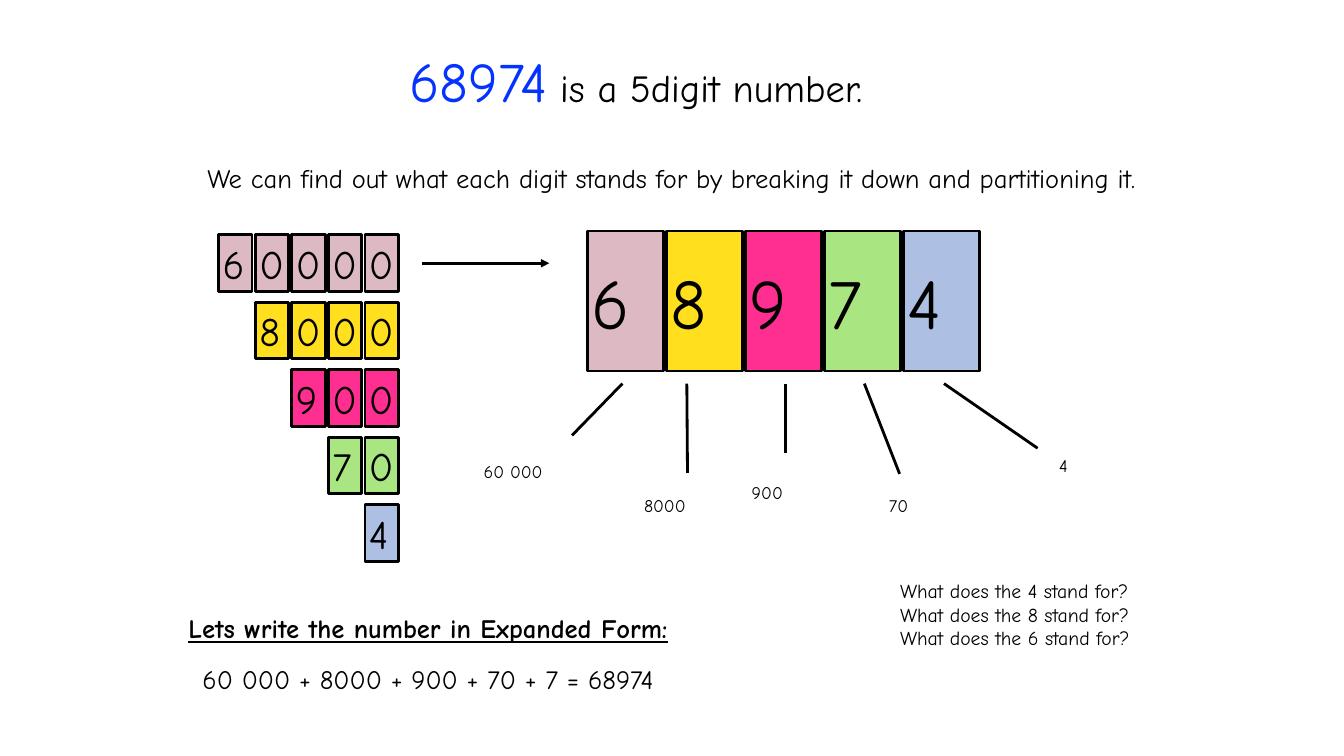
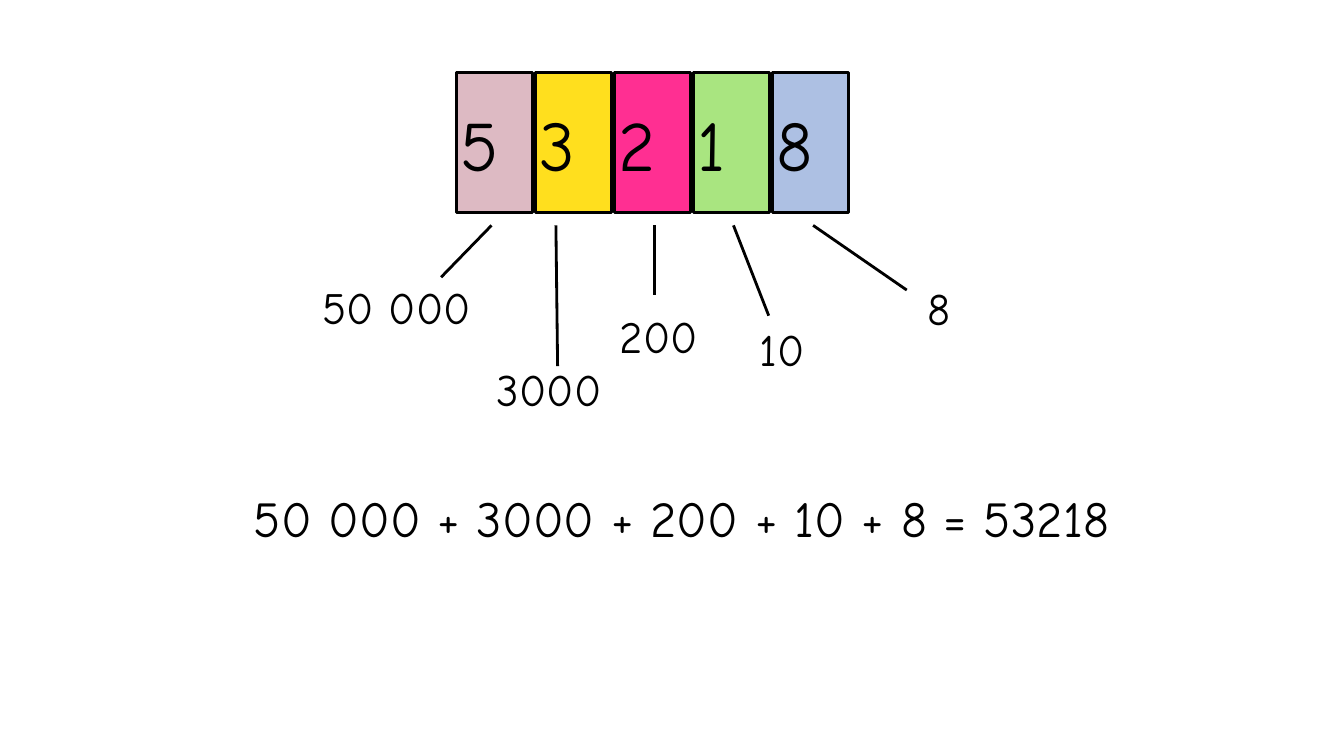
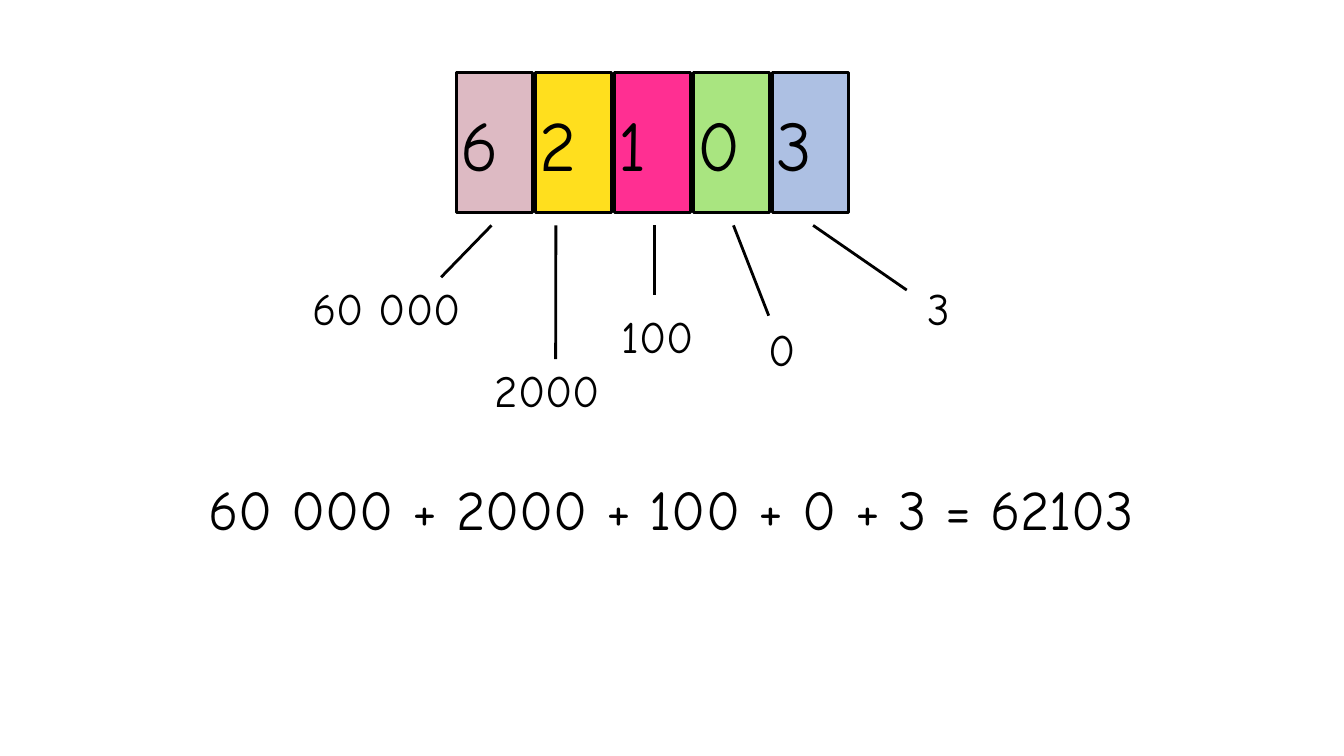
from pptx import Presentation
from pptx.dml.color import RGBColor as Rgb
from pptx.enum.shapes import MSO_CONNECTOR as Connector, MSO_SHAPE as Preset
from pptx.enum.text import MSO_ANCHOR as Anchor, MSO_AUTO_SIZE as AutoSize, PP_ALIGN as Align
from pptx.oxml.ns import qn
from pptx.util import Pt
from lxml.etree import SubElement

FONT = "Comic Neue"
COLOURS = {
    "ink": "000000",
    "blue": "0433FF",
    "ten thousands": "DDBAC3",
    "thousands": "FFDF1E",
    "hundreds": "FF2F92",
    "tens": "A9E580",
    "ones": "ADC0E3",
}
PLACES = ["ten thousands", "thousands", "hundreds", "tens", "ones"]
LINE_WIDTH = 2
INSET = 2.8
CARD_WIDTH, CARD_HEIGHT, CARD_STEP = 54, 100, 56.4
TILE_WIDTH, TILE_HEIGHT, TILE_STEP, ROW_STEP = 23.8, 40.3, 26.1, 48.2
TILE_LEFT, TILE_TOP = 156.3, 167.8


def add_box(page, left, top, width, height, fill=None, wrap=True, grow=True):
    frame = [Pt(value) for value in (left, top, width, height)]
    if fill:
        box = page.shapes.add_shape(Preset.RECTANGLE, *frame)
        box.shadow.inherit = False
        box.fill.solid()
        box.fill.fore_color.rgb = Rgb.from_string(COLOURS[fill])
        box.line.color.rgb = Rgb.from_string(COLOURS["ink"])
        box.line.width = Pt(LINE_WIDTH)
    else:
        box = page.shapes.add_textbox(*frame)
    text_frame = box.text_frame
    text_frame.word_wrap = wrap
    text_frame.auto_size = AutoSize.SHAPE_TO_FIT_TEXT if grow else AutoSize.NONE
    text_frame.vertical_anchor = Anchor.MIDDLE
    text_frame.margin_left = text_frame.margin_right = Pt(INSET)
    text_frame.margin_top = text_frame.margin_bottom = Pt(INSET)
    return box


def write(box, text, size, colour="ink", bold=None, underline=None, new_para=False):
    text_frame = box.text_frame
    para = text_frame.add_paragraph() if new_para else text_frame.paragraphs[-1]
    para.alignment = Align.LEFT
    span = para.add_run()
    span.text = text
    span.font.name = FONT
    span.font.size = Pt(size)
    span.font.bold = bold
    span.font.underline = underline
    span.font.color.rgb = Rgb.from_string(COLOURS[colour])


numbers = [
    {
        "digits": "68974", "left": 419.8, "top": 165,
        "second_end": (71.3, 172.8), "arrows": [(301.7, 188, 392.4, 188)],
        "label_size": 12.7, "label_height": 20.9,
        "labels": [
            ("60 000", 342.7, 326.2, 48.2), ("8000", 457.2, 350.6, 36.7),
            ("900", 534.2, 341.3, 28.8), ("70", 632.2, 350.6, 21.6),
            ("4", 753.8, 321.8, 13.7),
        ],
        "sum": ("60 000 + 8000 + 900 + 70 + 7 = 68974", 141.8, 470.2, 356.4, 28.8, 19),
    },
    {
        "digits": "53218", "left": 326.3, "top": 52,
        "second_end": (72, 209.5), "arrows": [],
        "label_size": 32, "label_height": 44.6,
        "labels": [
            ("50 000", 227.5, 196.6, 113.8), ("3000", 352.1, 255.6, 84.2),
            ("200", 439.9, 217.4, 64.8), ("10", 540, 226.8, 39.6),
            ("8", 659.5, 197.3, 25.2),
        ],
        "sum": ("50 000 + 3000 + 200 + 10 + 8 = 53218", 178.6, 344.9, 656.6, 49, 36),
    },
    {
        "digits": "62103", "left": 326.3, "top": 52,
        "second_end": (70.6, 204.5), "arrows": [],
        "label_size": 32, "label_height": 44.6,
        "labels": [
            ("60 000", 220.3, 197.3, 113.8), ("2000", 350.6, 256.3, 84.2),
            ("100", 441.4, 217.4, 59.8), ("0", 545.8, 226.8, 25.2),
            ("3", 659.5, 197.3, 25.2),
        ],
        "sum": ("60 000 + 2000 + 100 + 0 + 3 = 62103", 146.2, 336.2, 692.6, 54, 40),
    },
]

deck = Presentation()
deck.slide_width, deck.slide_height = Pt(960), Pt(540)

for number in numbers:
    page = deck.slides.add_slide(deck.slide_layouts[6])
    left, top = number["left"], number["top"]

    for column, (digit, place) in enumerate(zip(number["digits"], PLACES)):
        card = add_box(page, left + column * CARD_STEP, top, CARD_WIDTH, CARD_HEIGHT,
                       fill=place, grow=False)
        write(card, digit, 50.6)

    starts = [24.8, 70.8, 141.1, 197.6, 254.5]
    ends = [(-11.2, 146), number["second_end"], (141.1, 158.4), (222.8, 173.5), (321.4, 155.2)]
    strokes = [(left + start, top + 109, left + end_x, top + end_y)
               for start, (end_x, end_y) in zip(starts, ends)]
    for stroke in strokes + number["arrows"]:
        line = page.shapes.add_connector(Connector.STRAIGHT, *[Pt(value) for value in stroke])
        line.line.color.rgb = Rgb.from_string(COLOURS["ink"])
        line.line.width = Pt(LINE_WIDTH)
        properties = line._element.spPr
        if stroke in number["arrows"]:
            SubElement(properties.find(qn("a:ln")), qn("a:tailEnd"), type="triangle")
        SubElement(properties, qn("a:effectLst"))

    for text, label_left, label_top, width in number["labels"]:
        label = add_box(page, label_left, label_top, width, number["label_height"], wrap=False)
        write(label, text, number["label_size"])

    text, *frame, size = number["sum"]
    write(add_box(page, *frame), text, size)

page = deck.slides[0]
for row, (digit, place) in enumerate(zip(numbers[0]["digits"], PLACES)):
    for column in range(row, len(PLACES)):
        tile = add_box(page, TILE_LEFT + column * TILE_STEP, TILE_TOP + row * ROW_STEP,
                       TILE_WIDTH, TILE_HEIGHT, fill=place, wrap=False)
        write(tile, digit if column == row else "0", 28.8)

title = add_box(page, 289.4, 30.2, 410.4, 54, wrap=False)
write(title, "68974", 40.1, colour="blue")
write(title, " is a 5digit number.", 27.4)

intro = add_box(page, 145.4, 100.8, 689.8, 51.8)
write(intro, "We can find out what each digit stands for by breaking it down and partitioning it.", 19)

heading = add_box(page, 131.8, 434.2, 414.7, 28.8)
write(heading, "Lets write the number in Expanded Form:", 19, bold=True, underline=True)

questions = add_box(page, 640.1, 410.4, 217.4, 56.9, wrap=False)
for index, digit in enumerate("486"):
    write(questions, f"What does the {digit} stand for?", 14.1, new_para=index > 0)

deck.save("out.pptx")
